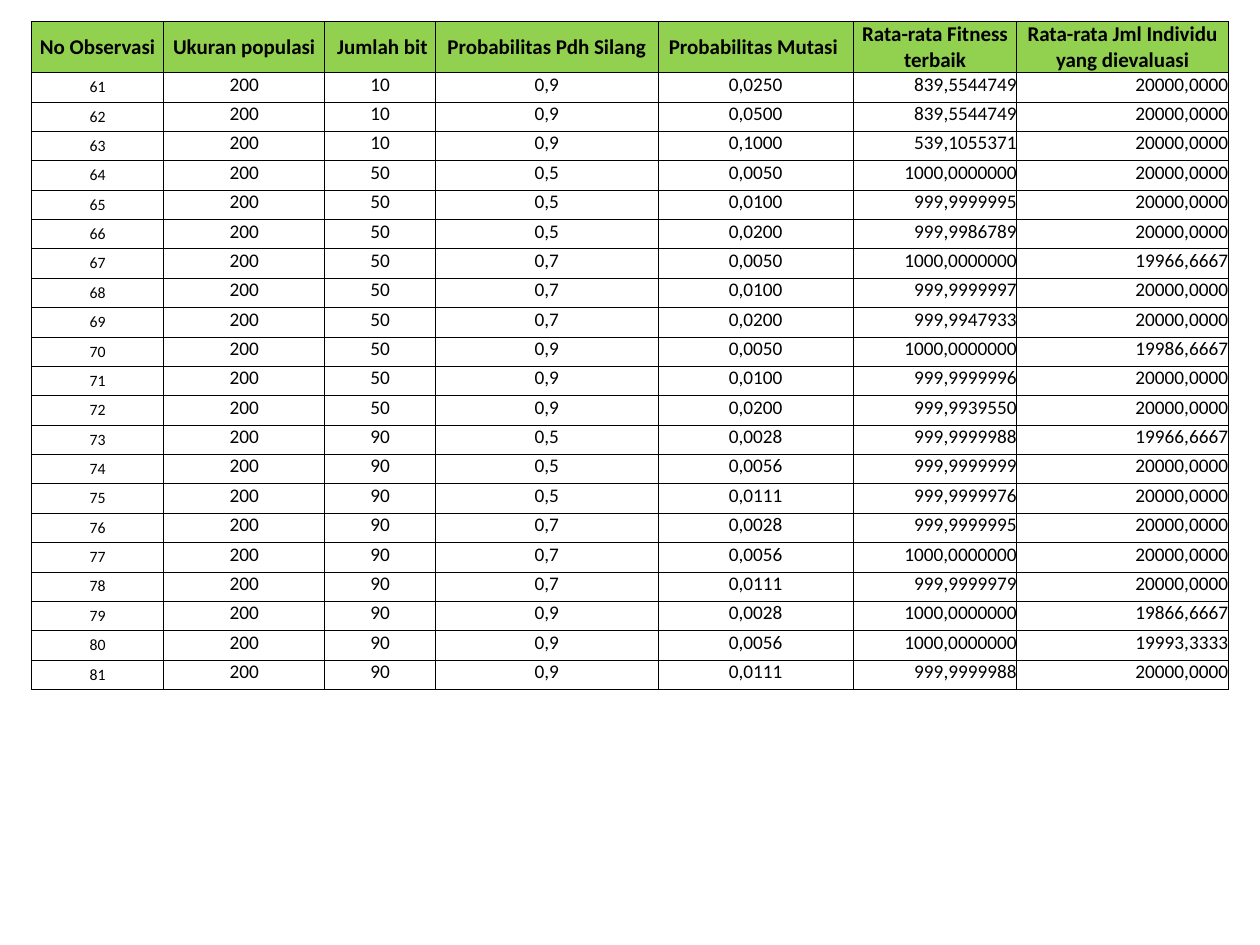
from lxml import etree
from pptx import Presentation
from pptx.dml.color import RGBColor
from pptx.enum.text import MSO_ANCHOR, PP_ALIGN
from pptx.oxml.ns import qn
from pptx.util import Inches, Pt

GREEN = RGBColor(0x92, 0xD0, 0x50)
BLACK = RGBColor(0, 0, 0)
CENTER, RIGHT = PP_ALIGN.CENTER, PP_ALIGN.RIGHT
TOP, MIDDLE = MSO_ANCHOR.TOP, MSO_ANCHOR.MIDDLE
FONT = "Calibri"
BORDER = Pt(0.5)

FIRST_OBSERVATION = 61
POPULATION = "200"
HEADER_HEIGHT = 0.4
COLUMN_WIDTHS = [1.05, 1.28, 0.88, 1.77, 1.55, 1.3, 1.68]
HEADERS = ["No Observasi", "Ukuran populasi", " Jumlah bit",
           "Probabilitas Pdh Silang", "Probabilitas Mutasi ",
           "Rata-rata Fitness terbaik",
           "Rata-rata Jml Individu yang dievaluasi"]

# Bits, crossover probability, mutation probability, fitness, individuals
RESULTS = [
    ("10", "0,9", "0,0250", "839,5544749", "20000,0000"),
    ("10", "0,9", "0,0500", "839,5544749", "20000,0000"),
    ("10", "0,9", "0,1000", "539,1055371", "20000,0000"),
    ("50", "0,5", "0,0050", "1000,0000000", "20000,0000"),
    ("50", "0,5", "0,0100", "999,9999995", "20000,0000"),
    ("50", "0,5", "0,0200", "999,9986789", "20000,0000"),
    ("50", "0,7", "0,0050", "1000,0000000", "19966,6667"),
    ("50", "0,7", "0,0100", "999,9999997", "20000,0000"),
    ("50", "0,7", "0,0200", "999,9947933", "20000,0000"),
    ("50", "0,9", "0,0050", "1000,0000000", "19986,6667"),
    ("50", "0,9", "0,0100", "999,9999996", "20000,0000"),
    ("50", "0,9", "0,0200", "999,9939550", "20000,0000"),
    ("90", "0,5", "0,0028", "999,9999988", "19966,6667"),
    ("90", "0,5", "0,0056", "999,9999999", "20000,0000"),
    ("90", "0,5", "0,0111", "999,9999976", "20000,0000"),
    ("90", "0,7", "0,0028", "999,9999995", "20000,0000"),
    ("90", "0,7", "0,0056", "1000,0000000", "20000,0000"),
    ("90", "0,7", "0,0111", "999,9999979", "20000,0000"),
    ("90", "0,9", "0,0028", "1000,0000000", "19866,6667"),
    ("90", "0,9", "0,0056", "1000,0000000", "19993,3333"),
    ("90", "0,9", "0,0111", "999,9999988", "20000,0000"),
]

# Formats by cell role
HEADER = dict(size=12, bold=True, align=CENTER, anchor=MIDDLE, fill=GREEN)
NUMBER = dict(size=9, bold=False, align=CENTER, anchor=MIDDLE, fill=None)
SETTING = dict(size=11, bold=False, align=CENTER, anchor=TOP, fill=None)
RESULT = dict(SETTING, align=RIGHT)
BODY_FORMATS = [NUMBER] + [SETTING] * 4 + [RESULT] * 2


def add_borders(cell):
    tc_pr = cell._tc.get_or_add_tcPr()
    for side in ("a:lnL", "a:lnR", "a:lnT", "a:lnB"):
        ln = etree.SubElement(tc_pr, qn(side), w=str(BORDER))
        fill = etree.SubElement(ln, qn("a:solidFill"))
        etree.SubElement(fill, qn("a:srgbClr"), val=str(BLACK))


def format_cell(cell, text, fmt):
    for side in ("left", "right", "top", "bottom"):
        setattr(cell, f"margin_{side}", 0)
    cell.vertical_anchor = fmt["anchor"]
    add_borders(cell)
    if fmt["fill"] is None:
        cell.fill.background()
    else:
        cell.fill.solid()
        cell.fill.fore_color.rgb = fmt["fill"]
    p = cell.text_frame.paragraphs[0]
    p.alignment = fmt["align"]
    r = p.add_run()
    r.text = text
    for name, value in dict(name=FONT, size=Pt(fmt["size"]),
                            bold=fmt["bold"]).items():
        setattr(r.font, name, value)
    r.font.color.rgb = BLACK


def add_results_table(slide, left, top, width, height):
    rows = [HEADERS] + [[str(number), POPULATION, *result]
                        for number, result in enumerate(RESULTS, FIRST_OBSERVATION)]
    table = slide.shapes.add_table(len(rows), len(HEADERS), Inches(left), Inches(top),
                                   Inches(width), Inches(height)).table
    table.first_row = table.horz_banding = False

    # Column widths share the box; body rows share what the header leaves
    for column, share in zip(table.columns, COLUMN_WIDTHS):
        column.width = Inches(width * share / sum(COLUMN_WIDTHS))
    body_height = (height - HEADER_HEIGHT) / len(RESULTS)
    for i, texts in enumerate(rows):
        table.rows[i].height = Inches(body_height if i else HEADER_HEIGHT)
        formats = BODY_FORMATS if i else [HEADER] * len(HEADERS)
        for j, (text, fmt) in enumerate(zip(texts, formats)):
            format_cell(table.cell(i, j), text, fmt)


def main():
    prs = Presentation()
    prs.slide_width, prs.slide_height = Inches(10), Inches(7.5)
    slide = prs.slides.add_slide(prs.slide_layouts[6])
    add_results_table(slide, 0.25, 0.17, 9.5, 5.3)
    prs.save("out.pptx")


if __name__ == "__main__":
    main()
